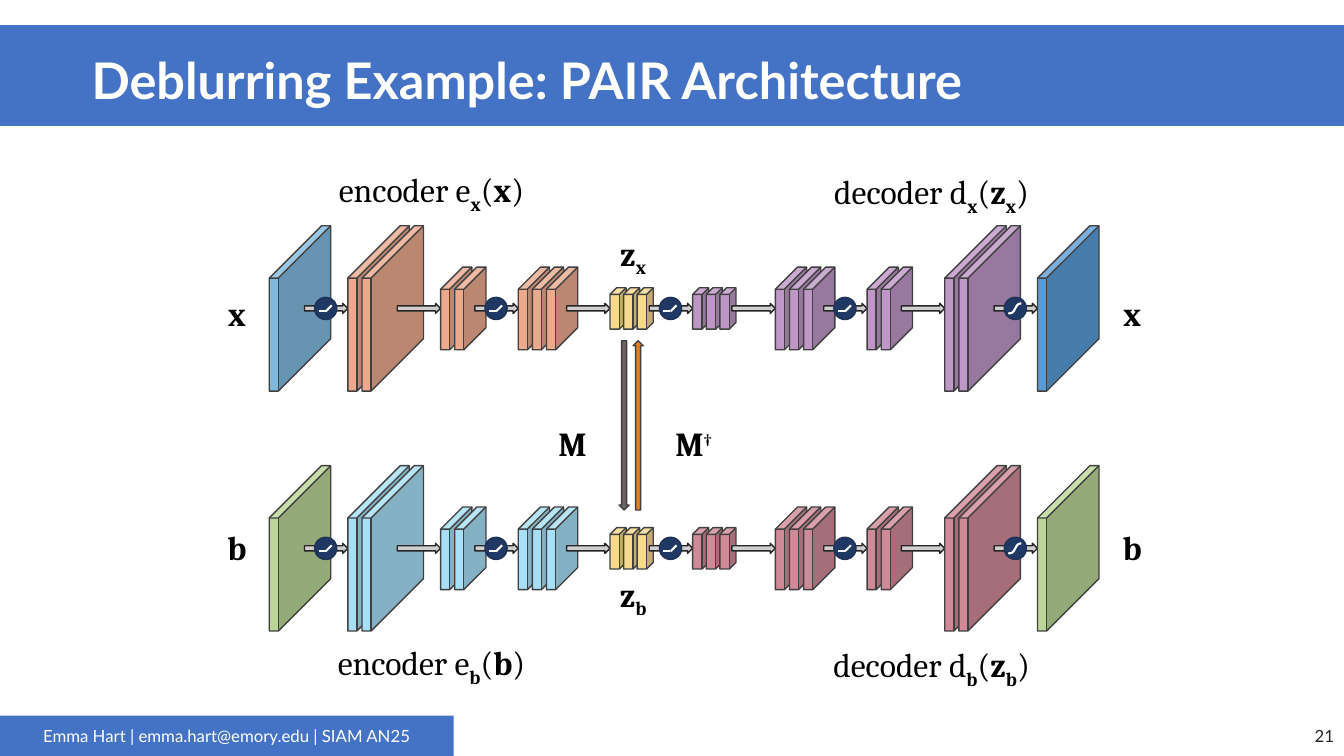
"""Build the slide on the PAIR architecture for deblurring."""
import math

import lxml.etree
import pptx
import pptx.dml.color
import pptx.enum.shapes
import pptx.enum.text
import pptx.oxml.ns
import pptx.util

RGB = pptx.dml.color.RGBColor
KIND = pptx.enum.shapes.MSO_SHAPE
ALIGN = pptx.enum.text.PP_ALIGN
ANCHOR = pptx.enum.text.MSO_ANCHOR

COLS, ROWS = 1333, 750
WHITE, BLACK, INK = RGB(255, 255, 255), RGB(0, 0, 0), RGB(0x26, 0x26, 0x26)
BLUE, EDGE, GREY = RGB(0x44, 0x72, 0xC4), RGB(0x40, 0x40, 0x40), RGB(0xD0, 0xCE, 0xCE)
NAVY, RIM = RGB(0x20, 0x38, 0x64), RGB(0x1E, 0x32, 0x56)
SKY, SEA = RGB(0x80, 0xB9, 0xDE), RGB(0x5B, 0x9B, 0xD5)
PEACH, LILAC = RGB(0xEC, 0xA9, 0x8C), RGB(0xBF, 0x97, 0xC6)
LEAF, ICE, ROSE = RGB(0xBB, 0xD5, 0x98), RGB(0xA6, 0xDF, 0xF6), RGB(0xD0, 0x8A, 0x97)
GOLD, SLATE, AMBER = RGB(0xF6, 0xD8, 0x8F), RGB(0x6C, 0x63, 0x6B), RGB(0xE3, 0x82, 0x1C)

MATH = {"name": "Cambria", "size": pptx.util.Pt(24)}
HEAD = {"name": "Lato", "size": pptx.util.Pt(36)}
NOTE = {"name": "Lato", "size": pptx.util.Pt(12)}

SIZES = {"big": (61, 164, 0.851, 78, 14), "mid": (31, 82, 0.708, 63, 14),
         "low": (16, 41, 0.412, 55, 13.5)}
STAGES = [("big", 1), ("big", 2), ("mid", 2), ("mid", 3), ("low", 3),
          ("low", 3), ("mid", 3), ("mid", 2), ("big", 2), ("big", 1)]
REACH, DOT = 43, 22


def cell(count):
    """Turn a count of grid cells into a length."""
    return pptx.util.Inches(count / 100)


def form(slide, kind, box, fill, edge=None):
    """Add a filled preset shape, outlined if an edge colour is given."""
    shape = slide.shapes.add_shape(kind, *map(cell, box))
    shape.shadow.inherit = False
    shape.fill.solid()
    shape.fill.fore_color.rgb = fill
    if edge is None:
        shape.line.fill.background()
    else:
        shape.line.color.rgb = edge
        shape.line.width = pptx.util.Pt(1)
    return shape


def write(shape, runs, style, tone, align=ALIGN.CENTER, anchor=ANCHOR.TOP):
    """Write runs of text, bold flag, baseline and font into a shape."""
    frame = shape.text_frame
    frame.word_wrap = True
    frame.vertical_anchor = anchor
    para = frame.paragraphs[0]
    para.alignment = align
    for text, bold, base, face in runs:
        run = para.add_run()
        run.text = text
        for key, value in {**style, "bold": bold, "name": face or style["name"]}.items():
            setattr(run.font, key, value)
        run.font.color.rgb = tone
        if base:
            run._r.get_or_add_rPr().set("baseline", str(base * 1000))
    return para


def plain(text, bold=False):
    """Give one run on the baseline."""
    return text, bold, 0, None


def sub(text):
    """Give one bold subscript run."""
    return text, True, -25, None


def label(slide, mid, top, wide, runs):
    """Set a formula centred on a column."""
    shape = slide.shapes.add_textbox(*map(cell, (mid - wide / 2, top, wide, 50)))
    write(shape, runs, MATH, BLACK)


def header(slide, box):
    """Draw the title band."""
    left, top, width, height = box
    form(slide, KIND.RECTANGLE, box, BLUE)
    area = (left + 81, top + 15, width - 163, height - 15)
    shape = slide.shapes.add_textbox(*map(cell, area))
    para = write(shape, [plain("Deblurring Example: PAIR Architecture", True)],
                 HEAD, WHITE, ALIGN.LEFT, ANCHOR.MIDDLE)
    para.line_spacing = 0.9


def footer(slide, box):
    """Draw the speaker band and the page number."""
    left, top, width, height = box
    band = form(slide, KIND.RECTANGLE, (left, top, 450, height), BLUE)
    write(band, [plain("Emma Hart | emma.hart@emory.edu | SIAM AN25")],
          NOTE, WHITE, anchor=ANCHOR.MIDDLE)
    page = slide.shapes.add_textbox(*map(cell, (left + width - 300, top, 300, height)))
    write(page, [plain("21")], NOTE, INK, ALIGN.RIGHT, ANCHOR.MIDDLE)


def stroke(line):
    """Make a line white and of medium width."""
    line.color.rgb = WHITE
    line.width = pptx.util.Pt(1.5)


def node(slide, left, top, curved):
    """Draw an activation disc with a kinked or a curved graph."""
    form(slide, KIND.OVAL, (left, top, DOT, DOT), NAVY, RIM)
    if curved:
        points = [(cell(left + 11 + t), cell(top + 11 - 5 * math.tanh(t / 2.5)))
                  for t in range(-7, 7)]
        pen = slide.shapes.build_freeform(*points[0])
        pen.add_line_segments(points[1:], close=False)
        graph = pen.convert_to_shape()
        graph.shadow.inherit = False
        graph.fill.background()
        stroke(graph.line)
        return
    bends = [(left + 4, top + 14), (left + 11, top + 14), (left + 17, top + 8)]
    for start, end in zip(bends, bends[1:]):
        link = slide.shapes.add_connector(
            pptx.enum.shapes.MSO_CONNECTOR.STRAIGHT, *map(cell, start + end))
        stroke(link.line)
        lxml.etree.SubElement(link._element.spPr, pptx.oxml.ns.qn("a:effectLst"))


def net(slide, box, name, tones, tops):
    """Draw one autoencoder row and its labels."""
    left, top, width, height = box
    mid = top + height / 2
    first, enc, dec, last = tones
    fills = [first] + [enc] * 3 + [GOLD] + [dec] * 4 + [last]
    col = left
    for index, ((size, count), fill) in enumerate(zip(STAGES, fills)):
        wide, tall, depth, step, pitch = SIZES[size]
        for layer in range(count):
            area = (col + layer * pitch, mid - tall / 2, wide, tall)
            form(slide, KIND.CUBE, area, fill, EDGE).adjustments[0] = depth
        col += step + pitch * (count - 1)
        if index < len(STAGES) - 1:
            tail = col - REACH
            form(slide, KIND.RIGHT_ARROW, (tail, mid - 5, REACH, 10), GREY, INK)
            if index % 2 == 0:
                node(slide, tail + 10, mid - DOT / 2, index == len(STAGES) - 2)
    side, cap, code = (top + shift for shift in tops)
    for spot in (left - 32, left + width + 32):
        label(slide, spot, side, 42, [plain(name, True)])
    label(slide, left + 161, cap, 260,
          [plain("encoder e"), sub(name), plain("("), plain(name, True), plain(")")])
    label(slide, left + 657, cap + 2, 260,
          [plain("decoder d"), sub(name), plain("("), plain("z", True), sub(name), plain(")")])
    label(slide, left + 361, code, 60, [plain("z", True), sub(name)])


def bridge(slide, box):
    """Draw the two latent maps between the rows."""
    left, top, width, height = box
    mid = top + height / 2
    for spot, turn, fill in ((left + 5, 90, SLATE), (left + width - 5, 270, AMBER)):
        area = (spot - height / 2, mid - 5, height, 10)
        form(slide, KIND.RIGHT_ARROW, area, fill, EDGE).rotation = turn
    label(slide, left - 46, mid - 7, 60, [plain("M", True)])
    label(slide, left + 74, mid - 7, 100, [plain("M", True), ("†", False, 30, "Cabin")])


def main():
    """Build and save the deck."""
    deck = pptx.Presentation()
    deck.slide_width, deck.slide_height = cell(COLS), cell(ROWS)
    slide = deck.slides.add_slide(deck.slide_layouts[6])
    header(slide, (0, 25, COLS, 100))
    footer(slide, (0, 710, COLS, 40))
    net(slide, (267, 462, 824, 164), "b", (LEAF, ICE, ROSE, LEAF), (56, 170, 102))
    net(slide, (267, 224, 824, 164), "x", (SKY, PEACH, LILAC, SEA), (62, -61, 2))
    bridge(slide, (614, 338, 24, 168))
    deck.save("out.pptx")


if __name__ == "__main__":
    main()
